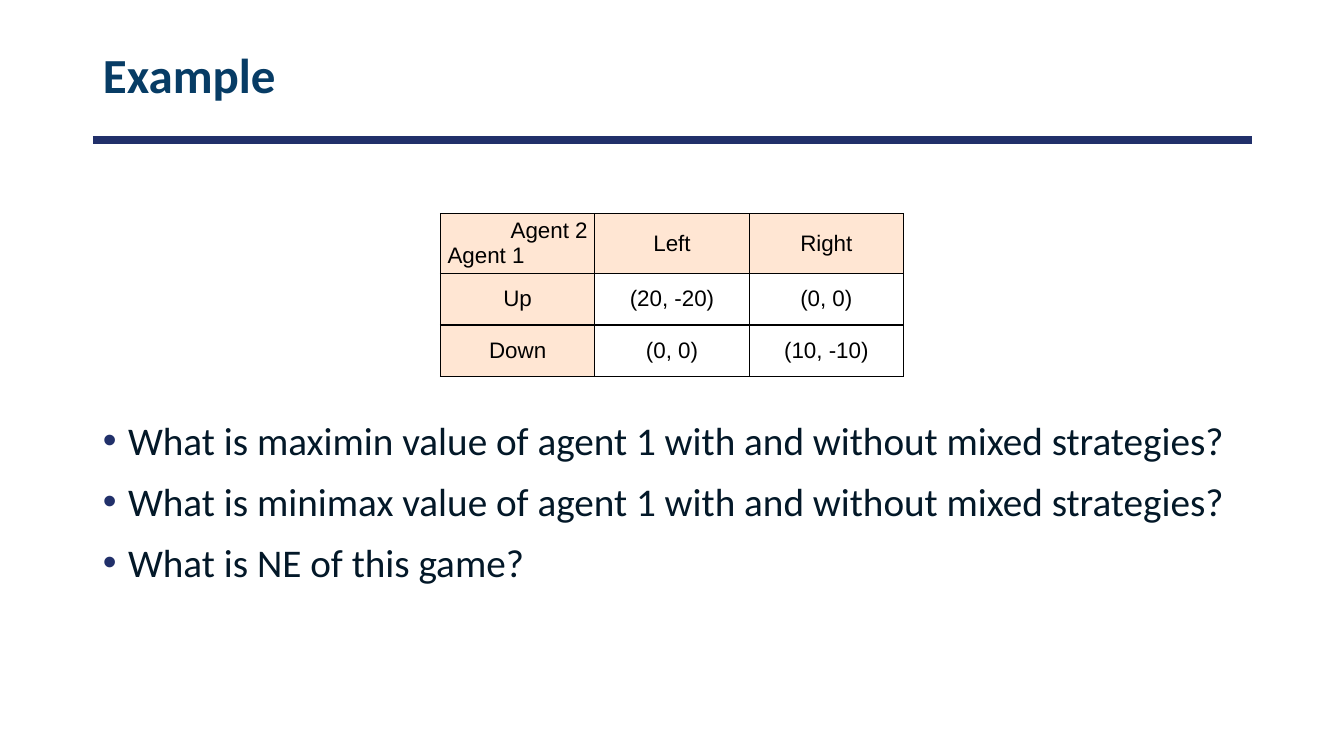
from dataclasses import dataclass

import lxml.etree
import pptx
import pptx.dml.color
import pptx.enum.shapes
import pptx.enum.text
import pptx.oxml.ns
import pptx.util

Cm = pptx.util.Cm
Pt = pptx.util.Pt
RGBColor = pptx.dml.color.RGBColor
Align = pptx.enum.text.PP_ALIGN
Anchor = pptx.enum.text.MSO_ANCHOR
qn = pptx.oxml.ns.qn

NAVY = RGBColor(0x21, 0x30, 0x6A)
TITLE_BLUE = RGBColor(0x07, 0x3C, 0x65)
INK = RGBColor(0x03, 0x18, 0x28)
PEACH = RGBColor(0xFF, 0xE6, 0xD3)
BLACK = RGBColor(0, 0, 0)
WHITE = RGBColor(0xFF, 0xFF, 0xFF)

LEFT, WIDTH = Cm(2.34), Cm(29.21)
RULE_TOP = Cm(3.53)
COLUMN_WIDTH = Cm(3.89)
ROW_HEIGHTS = [Cm(1.5), Cm(1.3), Cm(1.3)]
PAYOFFS = [
    ["Agent 2\nAgent 1", "Left", "Right"],
    ["Up", "(20, -20)", "(0, 0)"],
    ["Down", "(0, 0)", "(10, -10)"],
]
QUESTIONS = [
    "What is maximin value of agent 1 with and without mixed strategies?",
    "What is minimax value of agent 1 with and without mixed strategies?",
    "What is NE of this game?",
]


@dataclass
class TextStyle:
    name: str
    size: float
    color: RGBColor
    bold: bool = False


@dataclass
class TextArea:
    top: int
    height: int
    anchor: Anchor
    lines: list[str]
    style: TextStyle


TITLE = TextArea(Cm(0.58), Cm(2.74), Anchor.MIDDLE, ["Example"],
                 TextStyle("Calibri", 35, TITLE_BLUE, True))
BODY = TextArea(Cm(10.36), Cm(8.08), Anchor.TOP, QUESTIONS,
                TextStyle("Calibri", 28, INK))
CELL_STYLE = TextStyle("Arial", 16, BLACK)


def style_paragraph(para, style: TextStyle, align: Align) -> None:
    para.alignment = align
    para.font.name = style.name
    para.font.size = Pt(style.size)
    para.font.bold = style.bold
    para.font.color.rgb = style.color


def fill_placeholder(box, area: TextArea) -> None:
    box.left, box.top, box.width, box.height = LEFT, area.top, WIDTH, area.height
    frame = box.text_frame
    frame.text = "\n".join(area.lines)
    frame.word_wrap = True
    frame.auto_size = pptx.enum.text.MSO_AUTO_SIZE.NONE
    frame.vertical_anchor = area.anchor
    for para in frame.paragraphs:
        style_paragraph(para, area.style, Align.LEFT)


def add_bullet(para) -> None:
    para.space_before = Pt(10)
    properties = para._p.get_or_add_pPr()
    properties.set("marL", str(Cm(0.635)))
    properties.set("indent", str(-Cm(0.635)))
    color = lxml.etree.Element(qn("a:buClr"))
    lxml.etree.SubElement(color, qn("a:srgbClr"), val=str(NAVY))
    font = lxml.etree.Element(qn("a:buFont"), typeface="Arial")
    mark = lxml.etree.Element(qn("a:buChar"), char="•")
    default_font = properties.find(qn("a:defRPr"))
    for element in (color, font, mark):
        default_font.addprevious(element)


def add_borders(cell) -> None:
    properties = cell._tc.get_or_add_tcPr()
    for position, side in enumerate(("a:lnL", "a:lnR", "a:lnT", "a:lnB")):
        line = lxml.etree.Element(qn(side), w=str(Pt(1)))
        fill = lxml.etree.SubElement(line, qn("a:solidFill"))
        lxml.etree.SubElement(fill, qn("a:srgbClr"), val=str(BLACK))
        properties.insert(position, line)


def add_rule(page) -> None:
    rule = page.shapes.add_connector(
        pptx.enum.shapes.MSO_CONNECTOR.STRAIGHT,
        LEFT, RULE_TOP, LEFT + WIDTH, RULE_TOP)
    rule.line.color.rgb = NAVY
    rule.line.width = Pt(6)
    lxml.etree.SubElement(rule._element.spPr, qn("a:effectLst"))


def add_payoff_table(page) -> None:
    table = page.shapes.add_table(
        len(PAYOFFS), len(PAYOFFS[0]), Cm(11.1), Cm(5.39),
        COLUMN_WIDTH * len(PAYOFFS[0]), sum(ROW_HEIGHTS)).table
    table.first_row = False
    table.horz_banding = False
    for column in table.columns:
        column.width = COLUMN_WIDTH
    for row_index, values in enumerate(PAYOFFS):
        table.rows[row_index].height = ROW_HEIGHTS[row_index]
        for column_index, value in enumerate(values):
            cell = table.cell(row_index, column_index)
            cell.text = value
            cell.vertical_anchor = Anchor.MIDDLE
            cell.margin_left = cell.margin_right = Cm(0.18)
            cell.margin_top = cell.margin_bottom = Cm(0.08)
            cell.fill.solid()
            is_header = row_index == 0 or column_index == 0
            cell.fill.fore_color.rgb = PEACH if is_header else WHITE
            add_borders(cell)
            for para in cell.text_frame.paragraphs:
                style_paragraph(para, CELL_STYLE, Align.CENTER)
    agent_two, agent_one = table.cell(0, 0).text_frame.paragraphs
    agent_two.alignment = Align.RIGHT
    agent_one.alignment = Align.LEFT


def main() -> None:
    deck = pptx.Presentation()
    deck.slide_width, deck.slide_height = Cm(33.87), Cm(19.05)
    page = deck.slides.add_slide(deck.slide_layouts[1])
    add_rule(page)
    title, body = page.placeholders
    fill_placeholder(title, TITLE)
    title.text_frame.paragraphs[0].line_spacing = 0.9
    fill_placeholder(body, BODY)
    for para in body.text_frame.paragraphs:
        add_bullet(para)
    add_payoff_table(page)
    deck.save("out.pptx")


if __name__ == "__main__":
    main()
